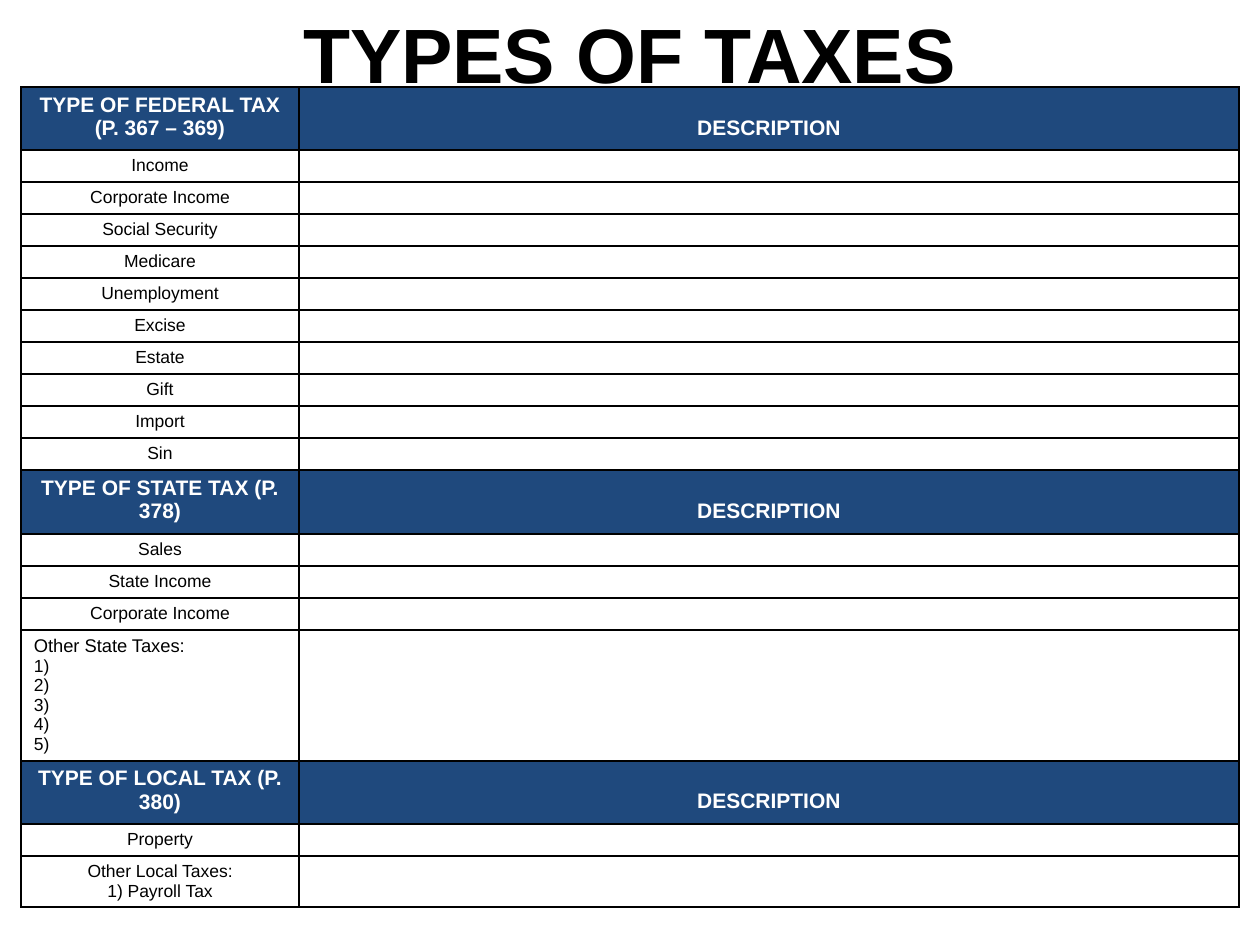
from dataclasses import dataclass

from lxml.etree import SubElement
from pptx import Presentation
from pptx.dml.color import RGBColor
from pptx.enum.text import MSO_ANCHOR, PP_ALIGN
from pptx.oxml.ns import qn
from pptx.util import Emu, Pt

PX_PER_INCH = 126


@dataclass(frozen=True)
class Theme:
    font: str = "Arial"
    ink: str = "000000"
    paper: str = "FFFFFF"
    band: str = "1F497D"
    title_size: float = 44
    header_size: float = 12
    body_size: float = 10
    lead_size: float = 10.5
    border: float = 1


THEME = Theme()
ROW, HEADER = 32, 63
CELL_SIDE, CELL_TOP, SECOND_LINE_TOP = 13, 6, 29

# Each section: header, its height, then rows of (lines, height, alignment).
SECTIONS = [
    ("TYPE OF FEDERAL TAX (P. 367 – 369)", HEADER, [
        ([name], ROW, PP_ALIGN.CENTER)
        for name in ("Income", "Corporate Income", "Social Security", "Medicare",
                     "Unemployment", "Excise", "Estate", "Gift", "Import", "Sin")
    ]),
    ("TYPE OF STATE TAX (P. 378)", HEADER + 1, [
        (["Sales"], ROW, PP_ALIGN.CENTER),
        (["State Income"], ROW, PP_ALIGN.CENTER),
        (["Corporate Income"], ROW, PP_ALIGN.CENTER),
        (["Other State Taxes:", "1)", "2)", "3)", "4)", "5)"], 131, PP_ALIGN.LEFT),
    ]),
    ("TYPE OF LOCAL TAX (P. 380)", HEADER, [
        (["Property"], ROW, PP_ALIGN.CENTER),
        (["Other Local Taxes:", "1) Payroll Tax"], 51, PP_ALIGN.CENTER),
    ]),
]


def px(length):
    return Emu(round(length * 914400 / PX_PER_INCH))


def style_para(para, size, color, align, bold=False):
    para.alignment = align
    font = para.font
    font.name, font.size, font.bold = THEME.font, Pt(size), bold
    font.color.rgb = RGBColor.from_string(color)


def add_borders(cell):
    """Draw all four edges; call before the cell is filled."""
    properties = cell._tc.get_or_add_tcPr()
    for edge in ("a:lnL", "a:lnR", "a:lnT", "a:lnB"):
        line = SubElement(properties, qn(edge), w=str(Pt(THEME.border)))
        fill = SubElement(line, qn("a:solidFill"))
        SubElement(fill, qn("a:srgbClr"), val=THEME.ink)


def prepare_cell(cell, top=CELL_TOP):
    cell.margin_left = cell.margin_right = px(CELL_SIDE)
    cell.margin_top, cell.margin_bottom = px(top), px(CELL_TOP)
    cell.vertical_anchor = MSO_ANCHOR.TOP
    add_borders(cell)


def fill_header(cell, text, top=CELL_TOP):
    prepare_cell(cell, top)
    cell.fill.solid()
    cell.fill.fore_color.rgb = RGBColor.from_string(THEME.band)
    cell.text = text
    style_para(cell.text_frame.paragraphs[0], THEME.header_size, THEME.paper,
               PP_ALIGN.CENTER, bold=True)


def fill_names(cell, lines, align):
    prepare_cell(cell)
    cell.fill.background()
    cell.text = "\n".join(lines)
    for index, para in enumerate(cell.text_frame.paragraphs):
        is_lead = index == 0 and align == PP_ALIGN.LEFT
        size = THEME.lead_size if is_lead else THEME.body_size
        style_para(para, size, THEME.ink, align)


def fill_blank(cell):
    """Leave room to write; the small type size keeps the row low."""
    prepare_cell(cell)
    cell.fill.background()
    para = cell.text_frame.paragraphs[0]
    end = SubElement(para._p, qn("a:endParaRPr"), sz=str(THEME.body_size * 100))
    SubElement(end, qn("a:latin"), typeface=THEME.font)


def add_title(page, left, top, width, height):
    title = page.shapes.title
    title.left, title.top, title.width, title.height = map(px, (left, top, width, height))
    title.text_frame.text = "TYPES OF TAXES"
    title.text_frame.vertical_anchor = MSO_ANCHOR.MIDDLE
    para = title.text_frame.paragraphs[0]
    style_para(para, THEME.title_size, THEME.ink, PP_ALIGN.CENTER, bold=True)
    para.font.underline = True


def add_tax_table(page, left, top, width, name_width):
    heights = [height for _, header_height, rows in SECTIONS
               for height in [header_height] + [row[1] for row in rows]]
    box = page.shapes.add_table(len(heights), 2, px(left), px(top),
                                px(width), px(sum(heights)))
    table = box.table
    table.first_row = table.horz_banding = False
    table.columns[0].width = px(name_width)
    table.columns[1].width = px(width - name_width)
    for row, height in zip(table.rows, heights):
        row.height = px(height)

    table_rows = iter(table.rows)
    for header, _, rows in SECTIONS:
        name_cell, description_cell = next(table_rows).cells
        fill_header(name_cell, header)
        fill_header(description_cell, "DESCRIPTION", SECOND_LINE_TOP)
        for lines, _, align in rows:
            name_cell, description_cell = next(table_rows).cells
            fill_names(name_cell, lines, align)
            fill_blank(description_cell)


def main():
    deck = Presentation()
    deck.slide_width, deck.slide_height = px(1260), px(945)
    page = deck.slides.add_slide(deck.slide_layouts[5])
    add_title(page, 0, 0, 1260, 105)
    add_tax_table(page, 21, 87, 1218, 278)
    deck.save("out.pptx")


if __name__ == "__main__":
    main()
